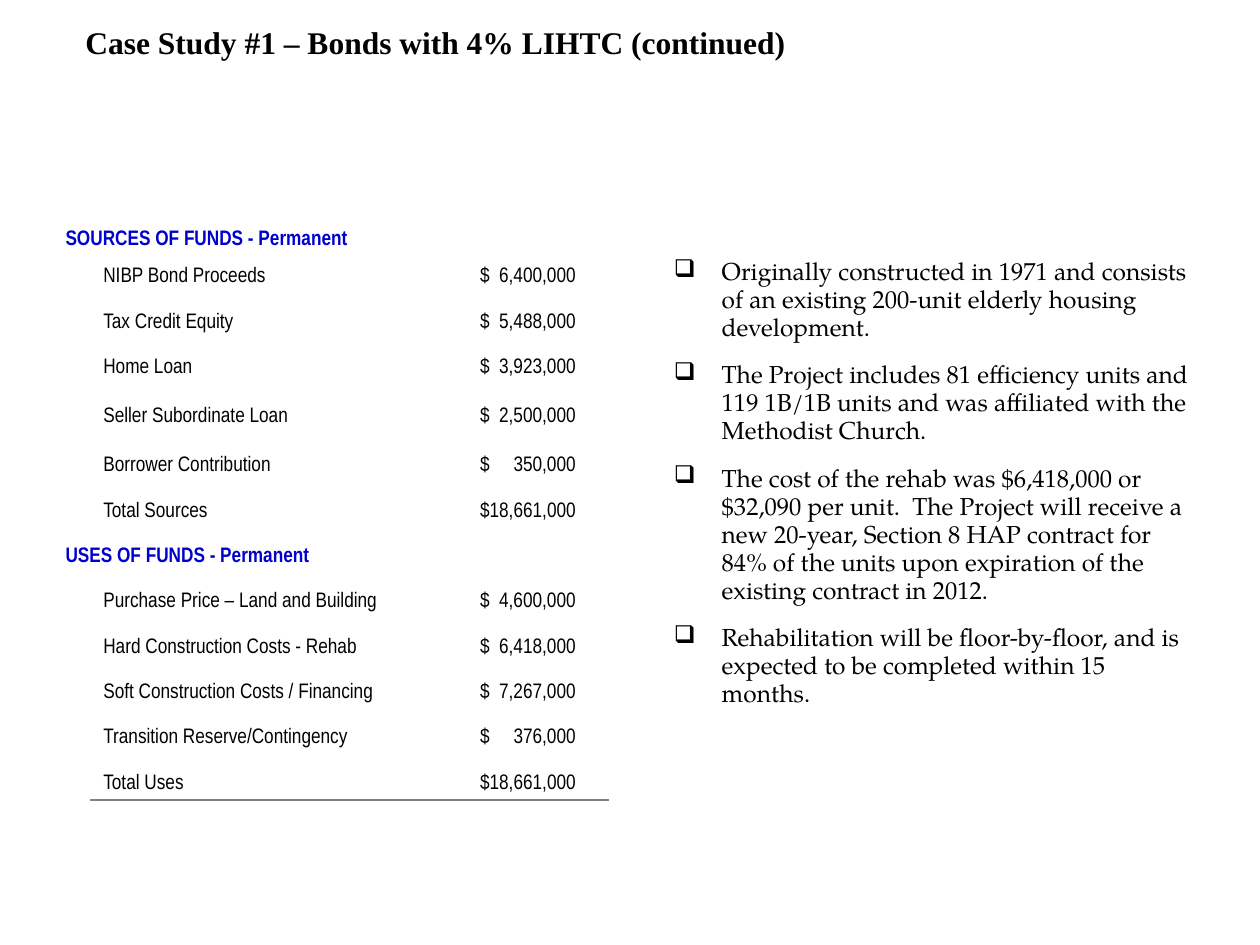
from lxml.etree import SubElement
from pptx import Presentation
from pptx.dml.color import RGBColor
from pptx.enum.text import MSO_ANCHOR
from pptx.oxml.ns import qn
from pptx.util import Inches, Pt


def write(paragraph, text, size=12, font="Arial Narrow", color="000000", bold=False):
    run = paragraph.add_run()
    run.text = text
    run.font.size = Pt(size)
    run.font.name = font
    run.font.bold = bold
    run.font.color.rgb = RGBColor.from_string(color)


def draw_bottom_border(cell, color="808080", width=1):
    line = SubElement(cell._tc.get_or_add_tcPr(), qn("a:lnB"), w=str(Pt(width)))
    fill = SubElement(line, qn("a:solidFill"))
    SubElement(fill, qn("a:srgbClr"), val=color)


presentation = Presentation()
presentation.slide_width = Inches(10)
presentation.slide_height = Inches(7.5)
slide = presentation.slides.add_slide(presentation.slide_layouts[6])

# Title
title = slide.shapes.add_textbox(Inches(0.58), Inches(0.14), Inches(9.17), Inches(0.39))
title.text_frame.word_wrap = True
title.text_frame.vertical_anchor = MSO_ANCHOR.MIDDLE
write(title.text_frame.paragraphs[0], "Case Study #1 – Bonds with 4% LIHTC (continued)",
      size=18, font="Times New Roman", bold=True)

# Project notes
notes = [
    "Originally constructed in 1971 and consists of an existing 200-unit elderly "
    "housing development.",
    "The Project includes 81 efficiency units and 119 1B/1B units and was affiliated "
    "with the Methodist Church.",
    "The cost of the rehab was $6,418,000 or $32,090 per unit.  The Project will "
    "receive a new 20-year, Section 8 HAP contract for 84% of the units upon "
    "expiration of the existing contract in 2012.",
    "Rehabilitation will be floor-by-floor, and is expected to be completed within "
    "15 months.",
]
body = slide.shapes.add_textbox(Inches(5.25), Inches(2), Inches(4.33), Inches(4.42))
body.text_frame.word_wrap = True
for index, note in enumerate(notes):
    paragraph = body.text_frame.add_paragraph() if index else body.text_frame.paragraphs[0]
    properties = paragraph._p.get_or_add_pPr()
    properties.set("marL", str(Inches(0.38)))
    properties.set("indent", str(-Inches(0.38)))
    SubElement(properties, qn("a:buChar"), char="❑")
    paragraph.line_spacing = 0.95
    if index:
        paragraph.space_before = Pt(11.2)
    write(paragraph, note, size=14, font="TeX Gyre Pagella")

# Sources and uses of funds: a row without an amount is a section heading
funds = [
    ("SOURCES OF FUNDS - Permanent", None),
    ("NIBP Bond Proceeds", "$\t6,400,000"),
    ("Tax Credit Equity", "$\t5,488,000"),
    ("Home Loan", "$\t3,923,000"),
    ("Seller Subordinate Loan", "$\t2,500,000"),
    ("Borrower Contribution", "$\t350,000"),
    ("Total Sources", "$18,661,000"),
    ("USES OF FUNDS - Permanent", None),
    ("Purchase Price – Land and Building", "$\t4,600,000"),
    ("Hard Construction Costs - Rehab", "$\t6,418,000"),
    ("Soft Construction Costs / Financing", "$\t7,267,000"),
    ("Transition Reserve/Contingency", "$\t376,000"),
    ("Total Uses", "$18,661,000"),
]
special_heights = {1: 0.3, 4: 0.39, 5: 0.39}
table = slide.shapes.add_table(len(funds), 3, Inches(0.42), Inches(1.67),
                               Inches(4.41), Inches(4.67)).table
table.first_row = False
table.horz_banding = False
for column, width in zip(table.columns, (0.3, 2.99, 1.12)):
    column.width = Inches(width)

for index, (label, amount) in enumerate(funds):
    table.rows[index].height = Inches(special_heights.get(index, 0.36))
    indent_cell, label_cell, amount_cell = cells = [table.cell(index, i) for i in range(3)]
    for cell in cells:
        cell.vertical_anchor = MSO_ANCHOR.BOTTOM
        cell.text_frame.paragraphs[0].font.size = Pt(12)

    if amount is None:
        indent_cell.merge(amount_cell)
        write(indent_cell.text_frame.paragraphs[0], label, color="0000CC", bold=True)
    else:
        indent_cell.margin_top = indent_cell.margin_bottom = 0
        write(label_cell.text_frame.paragraphs[0], label)
        paragraph = amount_cell.text_frame.paragraphs[0]
        tabs = SubElement(paragraph._p.get_or_add_pPr(), qn("a:tabLst"))
        SubElement(tabs, qn("a:tab"), pos=str(Inches(0.76)), algn="r")
        paragraph._p.pPr.insert(0, tabs)
        write(paragraph, amount)
        if label != "Total Sources":
            draw_bottom_border(label_cell)
            draw_bottom_border(amount_cell)
    for cell in cells:
        cell.fill.background()

presentation.save("out.pptx")
